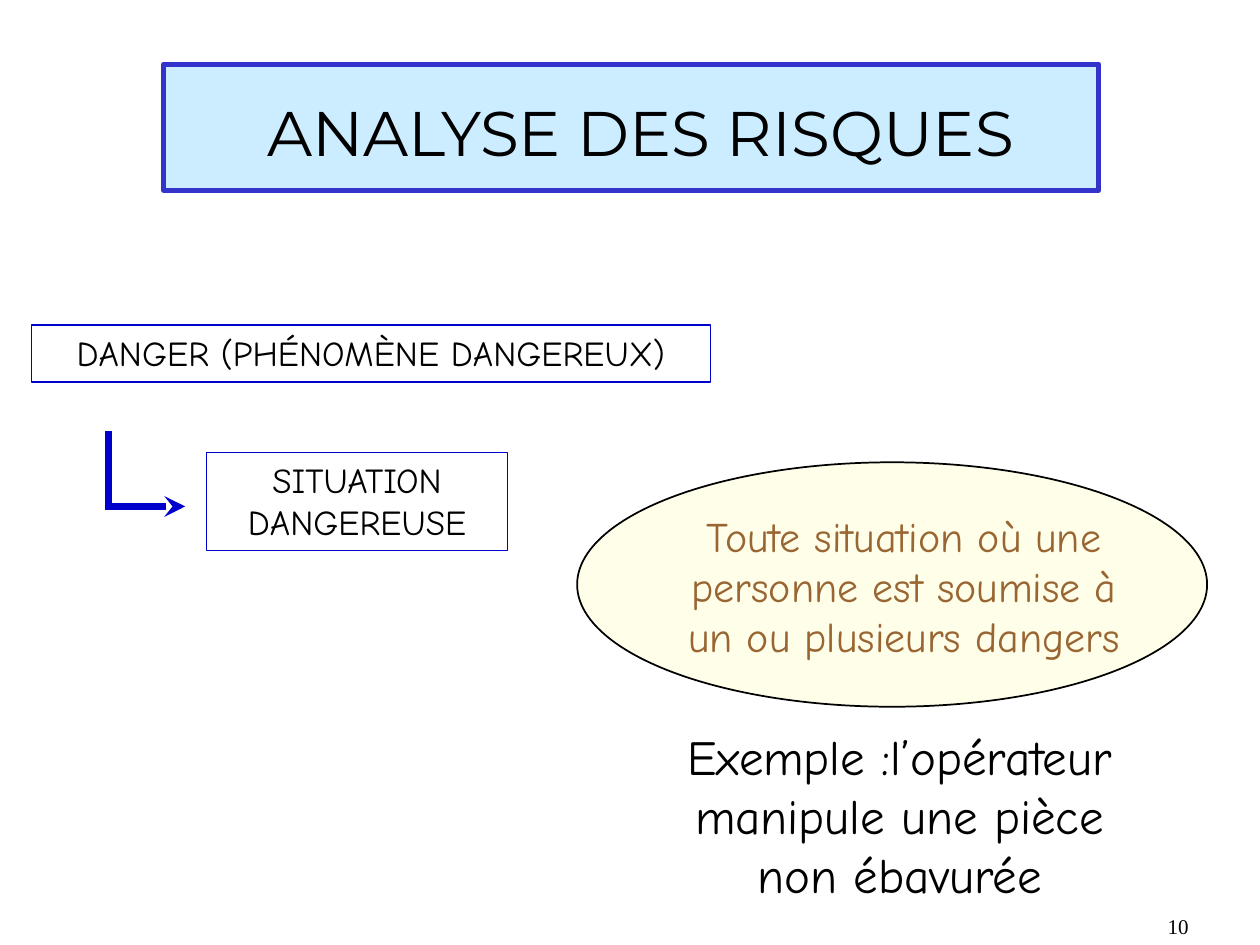
from lxml import etree
from pptx import Presentation
from pptx.dml.color import RGBColor
from pptx.enum import shapes, text
from pptx.oxml.ns import qn
from pptx.util import Pt

# Content: wording and (left, top, width, height) in points
TITLE = ("ANALYSE DES RISQUES", (60, 30, 612, 90))
BANNER = (93.6, 36.7, 534.2, 72)
STEPS = [
    ("DANGER (PHÉNOMÈNE DANGEREUX)", (18, 185.8, 388, 32.4), 1),
    ("SITUATION DANGEREUSE", (118.1, 258.5, 172, 56.2), 0.75),
]
DEFINITION = ("Toute situation où une personne est soumise à un ou plusieurs dangers",
              (378, 288, 277.2, 93.6))
DEFINITION_OVAL = (329.8, 264.2, 360, 139.7)
EXAMPLE = ("Exemple :l’opérateur manipule une pièce non ébavurée",
           (367.9, 411.8, 292.3, 108))
PAGE = ("10", (660.2, 518.4, 41.8, 21.6))
ELBOW = {"left": 59.8, "stem": 61.9, "top": 246.2, "bottom": 289.4, "right": 105.8}

THEME = {
    "body": "Comic Neue", "heading": "Montserrat", "number": "Times New Roman",
    "ink": "000000", "brown": "996633", "blue": "0000CC", "banner_line": "3333CC",
    "banner": "CCECFF", "cream": "FFFEE9",
    "title_size": 36, "example_size": 28, "definition_size": 24,
    "step_size": 20, "page_size": 12,
}


def color(name):
    return RGBColor.from_string(THEME[name])


def write(holder, words, size, font="body", ink="ink", align="CENTER", anchor="TOP"):
    frame = holder.text_frame
    frame.word_wrap = True
    frame.auto_size = text.MSO_AUTO_SIZE.NONE
    frame.vertical_anchor = text.MSO_ANCHOR[anchor]
    frame.margin_left = frame.margin_right = Pt(7.2)
    frame.margin_top = frame.margin_bottom = Pt(3.6)
    frame.text = words
    paragraph = frame.paragraphs[0]
    paragraph.alignment = text.PP_ALIGN[align]
    paragraph.font.name = THEME[font]
    paragraph.font.size = Pt(THEME[size])
    paragraph.font.color.rgb = color(ink)


def add_outline(slide, kind, box, line, width, fill=None):
    outline = slide.shapes.add_shape(kind, *map(Pt, box))
    outline.shadow.inherit = False
    if fill:
        outline.fill.solid()
        outline.fill.fore_color.rgb = color(fill)
    else:
        outline.fill.background()
    outline.line.color.rgb = color(line)
    outline.line.width = Pt(width)
    return outline


def add_line(slide, start, end, arrow=False):
    line = slide.shapes.add_connector(
        shapes.MSO_CONNECTOR.STRAIGHT, *map(Pt, start + end))
    line.line.color.rgb = color("blue")
    line.line.width = Pt(4)
    if arrow:
        etree.SubElement(line.line._get_or_add_ln(), qn("a:tailEnd"), type="stealth")
    etree.SubElement(line._element.spPr, qn("a:effectLst"))


def add_text(slide, item, size, **style):
    words, box = item
    write(slide.shapes.add_textbox(*map(Pt, box)), words, size, **style)


def main():
    deck = Presentation()
    deck.slide_width, deck.slide_height = Pt(720), Pt(540)
    slide = deck.slides.add_slide(deck.slide_layouts[5])
    rect, oval = shapes.MSO_SHAPE.RECTANGLE, shapes.MSO_SHAPE.OVAL

    # Banner, with the title placeholder raised above it
    add_outline(slide, rect, BANNER, "banner_line", 3, "banner")
    title = slide.shapes.title
    words, box = TITLE
    title.left, title.top, title.width, title.height = map(Pt, box)
    write(title, words, "title_size", font="heading", anchor="MIDDLE")
    slide.shapes._spTree.append(title._element)

    # Steps of the analysis
    for words, box, width in STEPS:
        write(add_outline(slide, rect, box, "blue", width), words, "step_size")

    # Elbow arrow from the first step to the second
    add_line(slide, (ELBOW["left"], ELBOW["bottom"]),
             (ELBOW["right"], ELBOW["bottom"]), arrow=True)
    add_line(slide, (ELBOW["stem"], ELBOW["bottom"]), (ELBOW["stem"], ELBOW["top"]))

    # Definition, example and page number
    add_outline(slide, oval, DEFINITION_OVAL, "ink", 1, "cream")
    add_text(slide, DEFINITION, "definition_size", ink="brown")
    add_text(slide, EXAMPLE, "example_size")
    add_text(slide, PAGE, "page_size", font="number", align="LEFT")

    deck.save("out.pptx")


if __name__ == "__main__":
    main()
